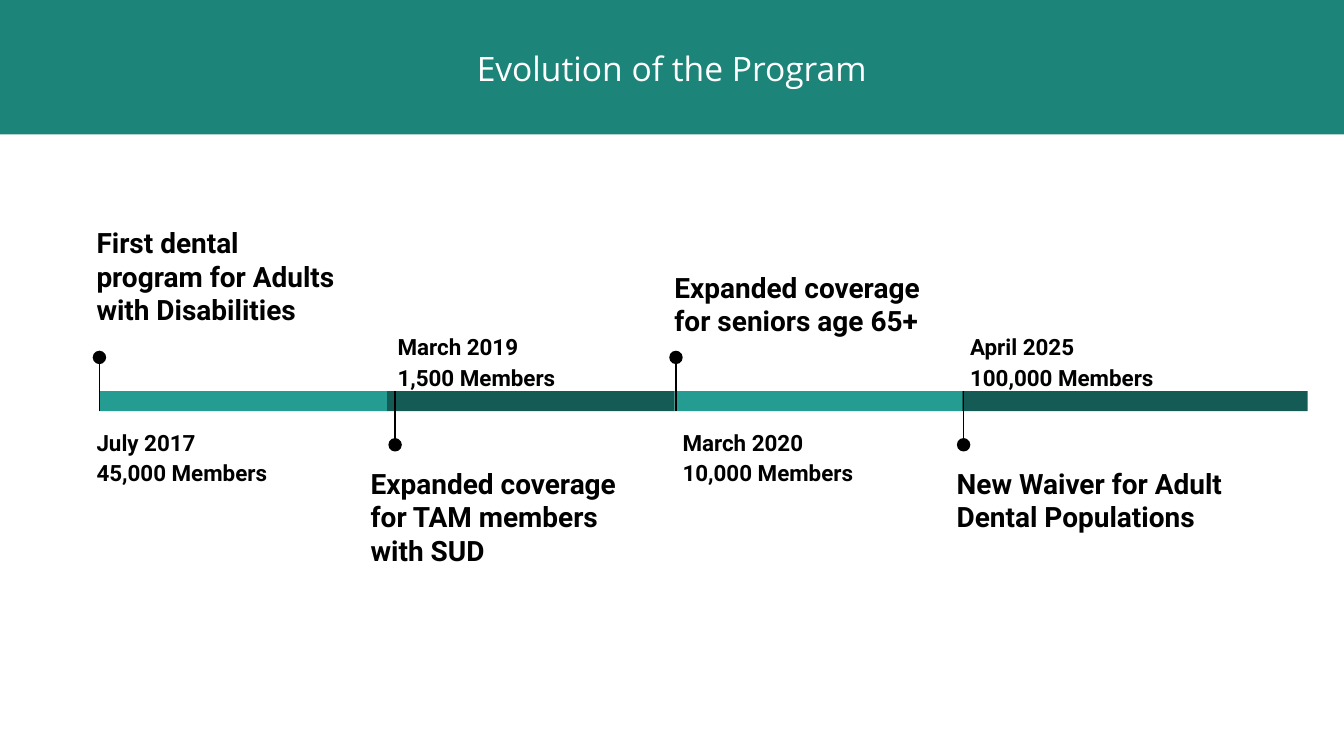
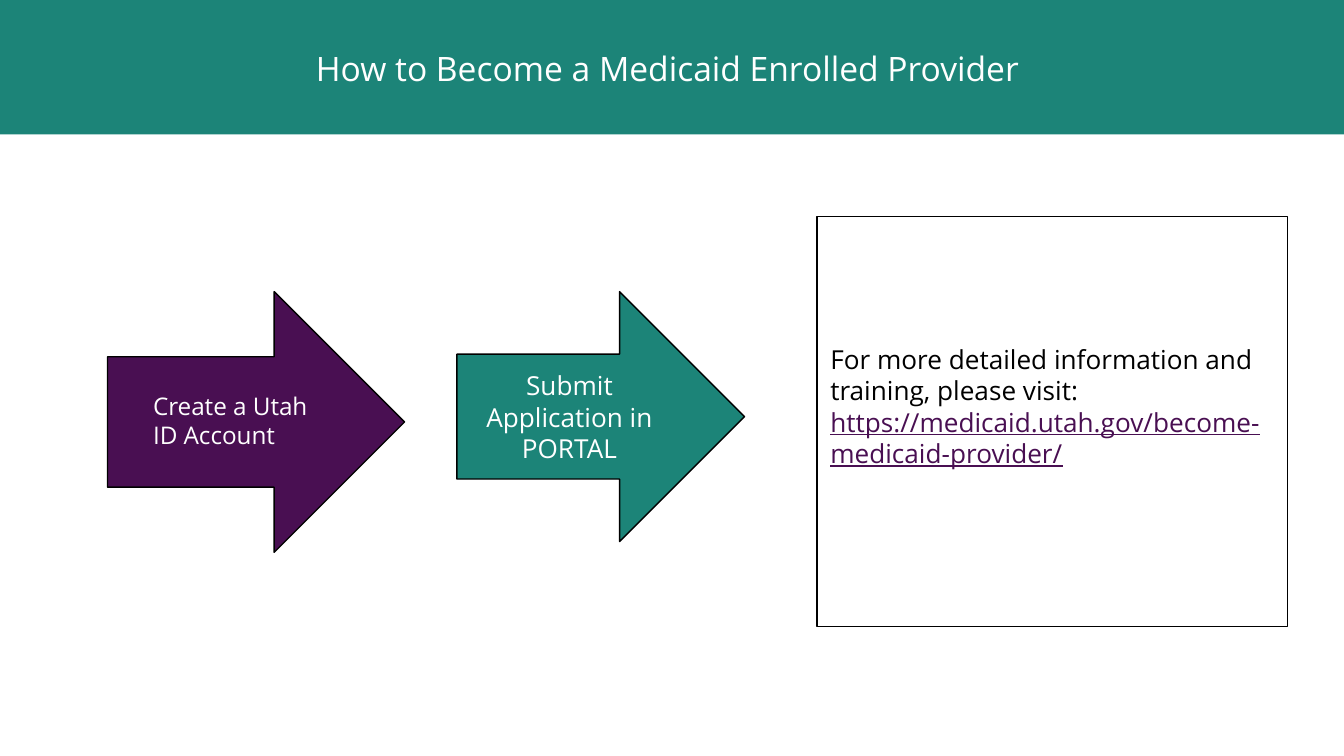
from lxml.etree import SubElement
from pptx import Presentation
from pptx.dml.color import RGBColor
from pptx.enum.shapes import MSO_CONNECTOR as Connector, MSO_SHAPE as Shape
from pptx.enum.text import MSO_ANCHOR as Anchor, PP_ALIGN as Align
from pptx.oxml.ns import qn
from pptx.util import Inches, Pt

COLORS = {
    "band": "1C8478", "light": "249C91", "dark": "155B55",
    "purple": "490F52", "black": "000000", "white": "FFFFFF",
}
RGB = {name: RGBColor.from_string(value) for name, value in COLORS.items()}
WIDTH = 10
HEIGHT = WIDTH * 9 / 16
MARGIN = 0.1


def add_shape(slide, kind, box, fill, outlined=False):
    shape = slide.shapes.add_shape(kind, *map(Inches, box))
    shape.shadow.inherit = False
    shape.fill.solid()
    shape.fill.fore_color.rgb = RGB[fill]
    if outlined:
        shape.line.color.rgb = RGB["black"]
        shape.line.width = Pt(0.75)
    else:
        shape.line.fill.background()
    return shape


def write(target, lines, font, size, color, box=None, align=Align.LEFT,
          anchor=Anchor.TOP, bold=False, spacing=1.0):
    """Write lines into a shape, or into a new text box on a slide when box is given."""
    if box:
        target = target.shapes.add_textbox(*map(Inches, box))
    frame = target.text_frame
    frame.word_wrap = True
    frame.vertical_anchor = anchor
    frame.margin_left = frame.margin_right = Inches(MARGIN)
    frame.margin_top = frame.margin_bottom = Inches(MARGIN)
    frame.text = "\n".join(lines)
    for paragraph in frame.paragraphs:
        paragraph.alignment = align
        paragraph.line_spacing = spacing
        paragraph.font.name = font
        paragraph.font.size = Pt(size)
        paragraph.font.bold = bold
        paragraph.font.color.rgb = RGB[color]
    return frame


presentation = Presentation()
presentation.slide_width = Inches(WIDTH)
presentation.slide_height = Inches(HEIGHT)

# Shared title band
slides = []
for title in ("Evolution of the Program", "How to Become a Medicaid Enrolled Provider "):
    slide = presentation.slides.add_slide(presentation.slide_layouts[6])
    add_shape(slide, Shape.RECTANGLE, (-0.01, 0, 10.03, 1), "band")
    write(slide, [title], "Open Sans", 18, "white", (1.72, 0.18, 6.56, 0.65),
          Align.CENTER, Anchor.MIDDLE)
    slides.append(slide)
timeline_slide, provider_slide = slides

# Timeline: one column per milestone, pins alternate above and below the bar
LEFT, COLUMN, LAST_COLUMN = 0.74, 2.14, 2.57
BAR_TOP, BAR_HEIGHT, DOT = 2.91, 0.15, 0.1
BAR_BOTTOM = BAR_TOP + BAR_HEIGHT
# date, members, event, event top, event width, then shifts of pin, date and event,
# then size of the date box
milestones = [
    ("July 2017", "45,000 Members", "First dental program for Adults with Disabilities",
     1.58, 2, 1.03, 0, -0.12, -0.12, 1.57, 0.41),
    ("March 2019", "1,500 Members", "Expanded coverage for TAM members with SUD",
     3.37, 2.08, 1.03, 0.06, -0.02, -0.22, 1.67, 0.41),
    ("March 2020", "10,000 Members", "Expanded coverage for seniors age 65+",
     1.91, 2.09, 0.7, 0.01, -0.04, -0.1, 1.49, 0.41),
    ("April 2025", "100,000 Members", "New Waiver for Adult Dental Populations",
     3.37, 2.46, 1.03, 0.01, -0.04, -0.14, 1.76, 0.57),
]
for index, (date, members, event, event_top, event_width, event_height, pin_shift,
            date_shift, event_shift, date_width, date_height) in enumerate(milestones):
    left = LEFT + index * COLUMN
    pin = left + pin_shift
    above = index % 2 == 0
    bar_width = LAST_COLUMN if index == len(milestones) - 1 else COLUMN
    add_shape(timeline_slide, Shape.RECTANGLE, (left, BAR_TOP, bar_width, BAR_HEIGHT),
              "light" if above else "dark")

    dot_middle, stem_start, stem_end = (
        (2.66, 2.67, BAR_BOTTOM) if above else (3.31, 3.31, BAR_TOP))
    stem = timeline_slide.shapes.add_connector(
        Connector.STRAIGHT, *map(Inches, (pin, stem_start, pin, stem_end)))
    stem.line.color.rgb = RGB["black"]
    stem.line.width = Pt(0.75)
    SubElement(stem._element.spPr, qn("a:effectLst"))
    add_shape(timeline_slide, Shape.OVAL,
              (pin - DOT / 2, dot_middle - DOT / 2, DOT, DOT), "black")

    write(timeline_slide, [date, members], "Roboto", 12, "black",
          (left + date_shift, BAR_BOTTOM if above else 2.35, date_width, date_height),
          bold=True, spacing=1.15)
    write(timeline_slide, [event], "Roboto", 15, "black",
          (left + event_shift, event_top, event_width, event_height), bold=True)

# Provider steps
ARROW_TOP = 2.17
add_shape(provider_slide, Shape.RIGHT_ARROW, (0.8, ARROW_TOP, 2.21, 1.94), "purple", True)
write(provider_slide, ["Create a Utah ID Account"], "Open Sans", 13, "white",
      (1.04, 2.81, 1.49, 0.52))
submit_arrow = add_shape(provider_slide, Shape.RIGHT_ARROW,
                         (3.4, ARROW_TOP, 2.14, 1.86), "band", True)
write(submit_arrow, ["Submit Application in PORTAL"], "Open Sans", 14, "white",
      align=Align.CENTER, anchor=Anchor.MIDDLE)

information_box = add_shape(provider_slide, Shape.RECTANGLE,
                            (6.08, 1.61, 3.5, 3.05), "white", True)
information = write(information_box,
                    ["For more detailed information and training, please visit: "],
                    "Open Sans", 14, "black", anchor=Anchor.MIDDLE)
information.margin_bottom = Inches(0.33)
address = information.paragraphs[0].add_run()
address.text = "https://medicaid.utah.gov/become-medicaid-provider/"
address.font.color.rgb = RGB["purple"]
address.font.underline = True

presentation.save("out.pptx")
